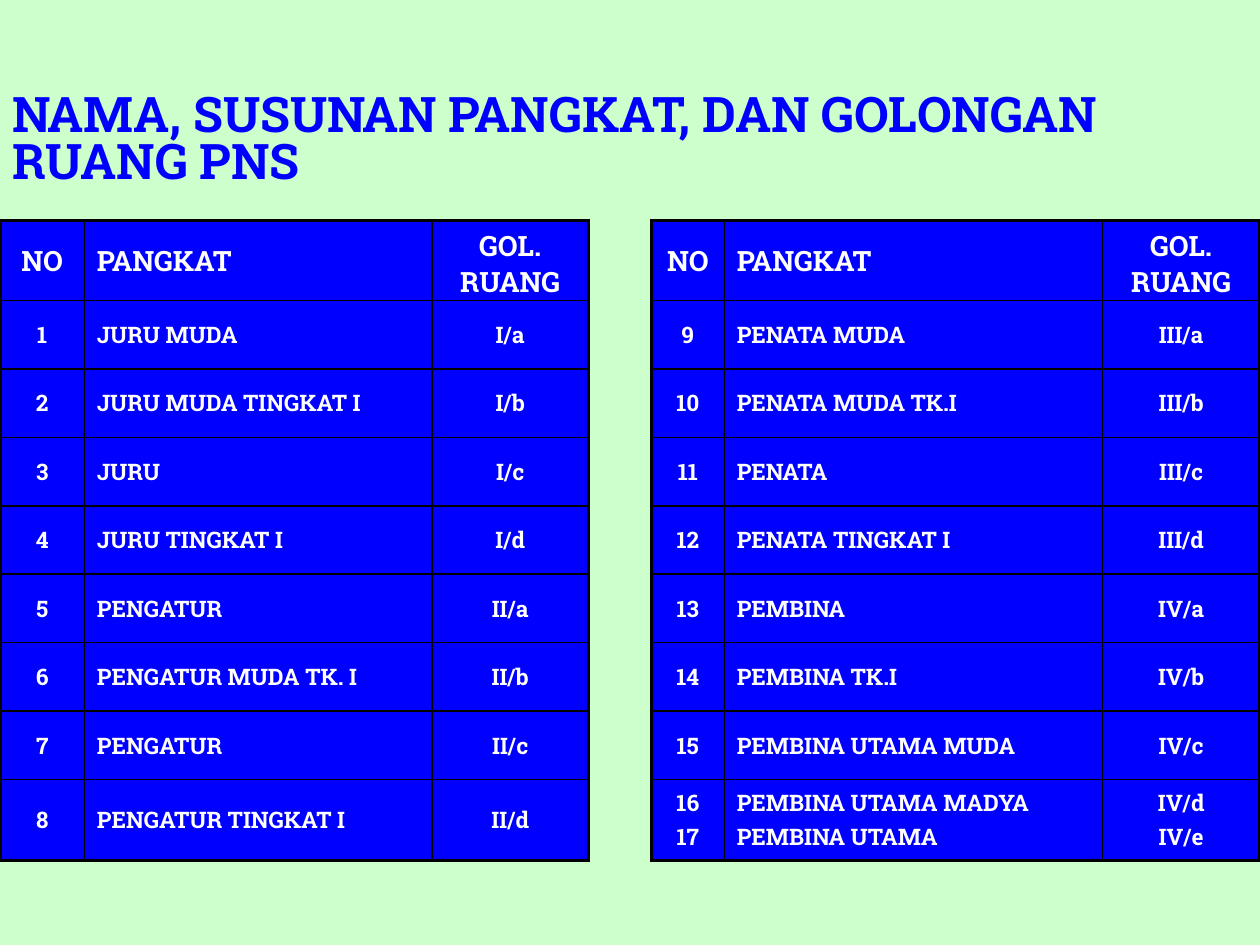
"""Build a slide listing civil servant ranks and grades in two tables."""
from dataclasses import dataclass

from lxml import etree
from pptx import Presentation
from pptx.dml.color import RGBColor
from pptx.enum.text import MSO_ANCHOR, PP_ALIGN
from pptx.oxml.ns import qn
from pptx.util import Cm, Pt

LEFT, CENTER = PP_ALIGN.LEFT, PP_ALIGN.CENTER
MIDDLE, BOTTOM = MSO_ANCHOR.MIDDLE, MSO_ANCHOR.BOTTOM


@dataclass(frozen=True)
class Theme:
    font: str = "Roboto Slab"
    background: RGBColor = RGBColor(0xCC, 0xFF, 0xCC)
    blue: RGBColor = RGBColor(0x00, 0x00, 0xFF)
    white: RGBColor = RGBColor(0xFF, 0xFF, 0xFF)
    black: RGBColor = RGBColor(0x00, 0x00, 0x00)
    title_size: Pt = Pt(28)
    header_size: Pt = Pt(16)
    body_size: Pt = Pt(13)
    outer_line: Pt = Pt(2.25)
    inner_line: Pt = Pt(1)


THEME = Theme()


def style_text(paragraph, size, color, alignment):
    paragraph.alignment = alignment
    for run in paragraph.runs:
        run.font.name = THEME.font
        run.font.size = size
        run.font.bold = True
        run.font.color.rgb = color


def add_border(cell, side, width):
    line = etree.SubElement(cell._tc.get_or_add_tcPr(), qn(f"a:ln{side}"), w=str(int(width)))
    fill = etree.SubElement(line, qn("a:solidFill"))
    etree.SubElement(fill, qn("a:srgbClr"), val=str(THEME.black))


HEADER = ("NO", "PANGKAT", "GOL.\u0020RUANG".replace("\u0020", " "))
HEADER = ("NO", "PANGKAT", "GOL. RUANG")
ALIGNMENTS = (CENTER, LEFT, CENTER)
HEADER_HEIGHT, RANK_HEIGHT, LAST_HEIGHT = Cm(1.6), Cm(1.38), Cm(1.63)
TABLE_TOP = Cm(4.45)

JUNIOR_RANKS = [
    ("1", "JURU MUDA", "I/a"),
    ("2", "JURU MUDA TINGKAT I", "I/b"),
    ("3", "JURU", "I/c"),
    ("4", "JURU TINGKAT I", "I/d"),
    ("5", "PENGATUR", "II/a"),
    ("6", "PENGATUR MUDA TK. I", "II/b"),
    ("7", "PENGATUR", "II/c"),
    ("8", "PENGATUR TINGKAT I", "II/d"),
]
SENIOR_RANKS = [
    ("9", "PENATA MUDA", "III/a"),
    ("10", "PENATA MUDA TK.I", "III/b"),
    ("11", "PENATA", "III/c"),
    ("12", "PENATA TINGKAT I", "III/d"),
    ("13", "PEMBINA", "IV/a"),
    ("14", "PEMBINA TK.I", "IV/b"),
    ("15", "PEMBINA UTAMA MUDA", "IV/c"),
    ("16\n17", "PEMBINA UTAMA MADYA\nPEMBINA UTAMA", "IV/d\nIV/e"),
]
RANK_TABLES = [
    (Cm(0), (Cm(1.7), Cm(7.01), Cm(3.15)), JUNIOR_RANKS),
    (Cm(13.13), (Cm(1.47), Cm(7.62), Cm(3.18)), SENIOR_RANKS),
]

presentation = Presentation()
presentation.slide_width, presentation.slide_height = Cm(25.4), Cm(19.05)
slide = presentation.slides.add_slide(presentation.slide_layouts[6])
slide.background.fill.solid()
slide.background.fill.fore_color.rgb = THEME.background

title = slide.shapes.add_textbox(Cm(0), Cm(0.76), Cm(22.86), Cm(3.18)).text_frame
title.word_wrap = True
title.vertical_anchor = BOTTOM
title.text = "NAMA, SUSUNAN PANGKAT, DAN GOLONGAN RUANG PNS"
title.paragraphs[0].line_spacing = 0.8
style_text(title.paragraphs[0], THEME.title_size, THEME.blue, LEFT)

for table_left, column_widths, ranks in RANK_TABLES:
    rows = [HEADER, *ranks]
    heights = [HEADER_HEIGHT, *[RANK_HEIGHT] * (len(ranks) - 1), LAST_HEIGHT]
    rank_table = slide.shapes.add_table(
        len(rows), len(HEADER), table_left, TABLE_TOP, sum(column_widths), sum(heights)
    ).table
    rank_table.first_row = rank_table.horz_banding = False
    for column, width in zip(rank_table.columns, column_widths):
        column.width = width

    for row_index, (entries, height) in enumerate(zip(rows, heights)):
        rank_table.rows[row_index].height = height
        size = THEME.body_size if row_index else THEME.header_size
        for column_index, (entry, alignment) in enumerate(zip(entries, ALIGNMENTS)):
            cell = rank_table.cell(row_index, column_index)
            outer_sides = {
                "L": column_index == 0,
                "R": column_index == len(HEADER) - 1,
                "T": row_index == 0,
                "B": row_index == len(rows) - 1,
            }
            for side, is_outer in outer_sides.items():
                add_border(cell, side, THEME.outer_line if is_outer else THEME.inner_line)
            cell.fill.solid()
            cell.fill.fore_color.rgb = THEME.blue
            cell.vertical_anchor = MIDDLE
            cell.text_frame.text = entry
            for paragraph in cell.text_frame.paragraphs:
                style_text(paragraph, size, THEME.white, alignment)
                spacing = etree.SubElement(paragraph._p.get_or_add_pPr(), qn("a:spcBef"))
                etree.SubElement(spacing, qn("a:spcPct"), val="20000")

presentation.save("out.pptx")
